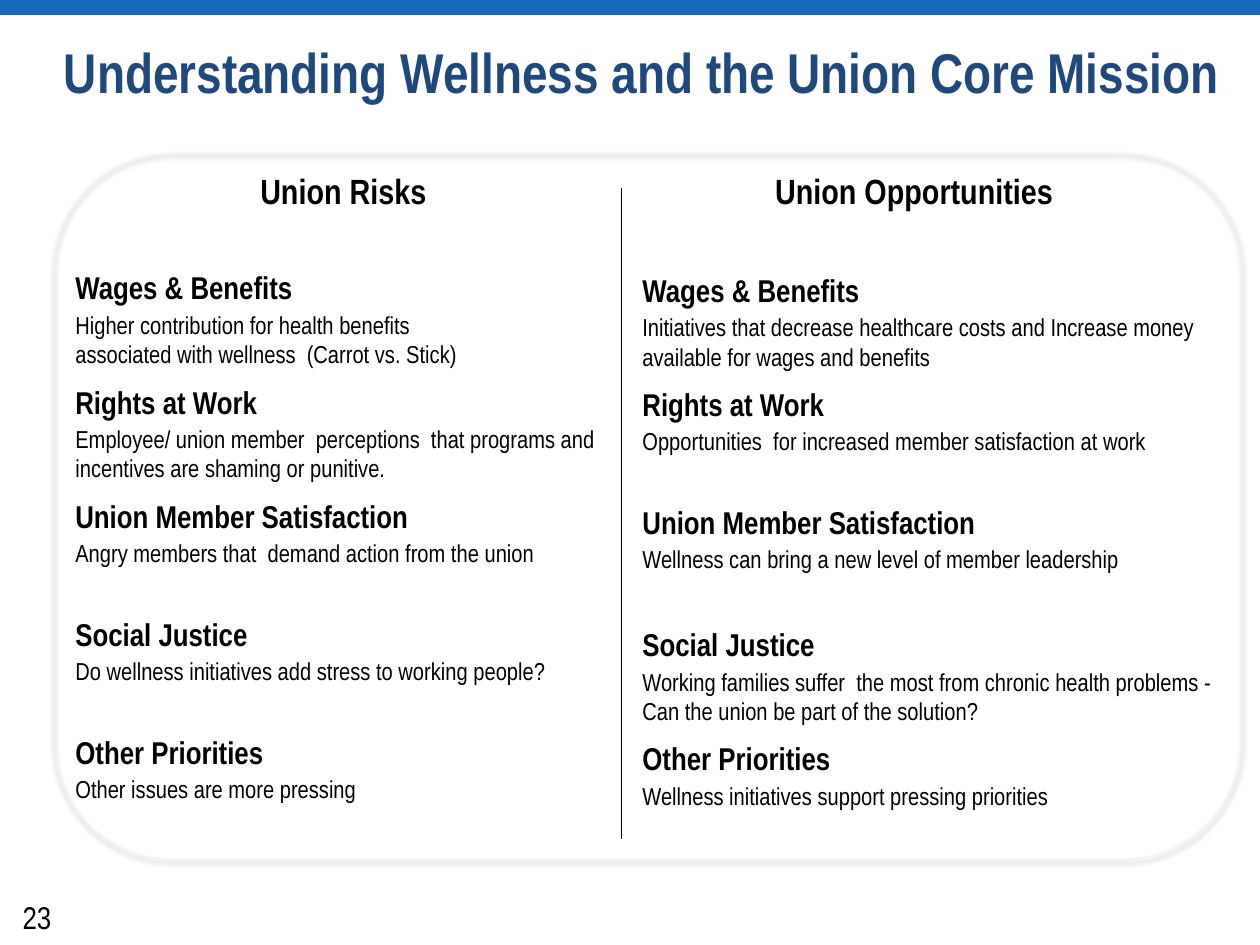
from dataclasses import dataclass

from lxml import etree
from pptx import Presentation
from pptx import util as u
from pptx.dml.color import RGBColor
from pptx.enum import shapes, text
from pptx.oxml import ns

FONT = "Arial Narrow"
COLORS = {
    "bar": "1769B8",
    "title": "1F497D",
    "text": "000000",
    "frame": "F2F2F2",
    "background": "FFFFFF",
}


@dataclass(frozen=True)
class Area:
    left: float
    top: float
    width: float
    height: float

    def lengths(self) -> list[u.Length]:
        return [u.Pt(v) for v in (self.left, self.top, self.width, self.height)]


@dataclass(frozen=True)
class Topic:
    heading: str
    body: str
    before: float = 6


@dataclass(frozen=True)
class Column:
    heading: str
    heading_area: Area
    topics_area: Area
    topics: tuple[Topic, ...]


COLUMNS = (
    Column(
        "Union Risks",
        Area(61.2, 93.6, 270, 31.7),
        Area(36, 149.8, 311.8, 450),
        (
            Topic("Wages & Benefits",
                  "Higher contribution for health benefits \n"
                  "associated with wellness  (Carrot vs. Stick)", 0),
            Topic("Rights at Work",
                  "Employee/ union member  perceptions  that programs and "
                  "incentives are shaming or punitive."),
            Topic("Union Member Satisfaction",
                  "Angry members that  demand action from the union"),
            Topic("Social Justice",
                  "Do wellness initiatives add stress to working people?", 25),
            Topic("Other Priorities", "Other issues are more pressing", 25),
        ),
    ),
    Column(
        "Union Opportunities",
        Area(371.5, 93.6, 301.7, 31.7),
        Area(360, 151.2, 354.2, 527),
        (
            Topic("Wages & Benefits",
                  "Initiatives that decrease healthcare costs and Increase money  "
                  "available for wages and benefits", 0),
            Topic("Rights at Work",
                  "Opportunities  for increased member satisfaction at work"),
            Topic("Union Member Satisfaction",
                  "Wellness can bring a new level of member leadership", 25),
            Topic("Social Justice",
                  "Working families suffer  the most from chronic health problems - "
                  "Can the union be part of the solution?", 27.4),
            Topic("Other Priorities",
                  "Wellness initiatives support pressing priorities"),
        ),
    ),
)


def color(name: str) -> RGBColor:
    return RGBColor.from_string(COLORS[name])


def add_box(page, area: Area):
    box = page.shapes.add_textbox(*area.lengths())
    box.text_frame.word_wrap = True
    return box


def write(para, content: str, size: float, bold: bool = False,
          ink: str = "text") -> None:
    """Add one run per line of content, with line breaks between them."""
    for index, line in enumerate(content.split("\n")):
        if index:
            para.add_line_break()
        span = para.add_run()
        span.text = line
        span.font.name = FONT
        span.font.size = u.Pt(size)
        span.font.bold = bold
        span.font.color.rgb = color(ink)


def add_bar(page) -> None:
    bar = page.shapes.add_shape(
        shapes.MSO_SHAPE.RECTANGLE, *Area(0, 0, 720, 8.6).lengths())
    bar.shadow.inherit = False
    bar.fill.solid()
    bar.fill.fore_color.rgb = color("bar")
    bar.line.fill.background()


def add_title(page) -> None:
    box = add_box(page, Area(29.5, 21.6, 684, 42.5))
    box.text_frame.vertical_anchor = text.MSO_ANCHOR.BOTTOM
    para = box.text_frame.paragraphs[0]
    para.line_spacing = 0.9
    write(para, "Understanding Wellness and the Union Core Mission", 32, True, "title")


def add_frame(page) -> None:
    """Draw the unfilled rounded frame with its soft downward shadow."""
    frame = page.shapes.add_shape(
        shapes.MSO_SHAPE.ROUNDED_RECTANGLE, *Area(31, 87.8, 678.2, 403.2).lengths())
    frame.fill.background()
    frame.line.color.rgb = color("frame")
    frame.line.width = u.Pt(0.75)
    frame.shadow.inherit = False
    effects = frame._element.spPr.find(ns.qn("a:effectLst"))
    shadow = etree.SubElement(
        effects, ns.qn("a:outerShdw"), blurRad=str(u.Pt(3.1)), dist=str(u.Pt(1.8)),
        dir="5400000", rotWithShape="0")
    tint = etree.SubElement(shadow, ns.qn("a:srgbClr"), val=COLORS["text"])
    etree.SubElement(tint, ns.qn("a:alpha"), val="35000")


def add_divider(page) -> None:
    divider = page.shapes.add_connector(
        shapes.MSO_CONNECTOR.STRAIGHT,
        u.Pt(355), u.Pt(107.3), u.Pt(355), u.Pt(479.5))
    divider.line.color.rgb = color("text")
    divider.line.width = u.Pt(0.75)
    etree.SubElement(divider._element.spPr, ns.qn("a:effectLst"))


def add_column(page, column: Column) -> None:
    para = add_box(page, column.heading_area).text_frame.paragraphs[0]
    para.alignment = text.PP_ALIGN.CENTER
    write(para, column.heading, 20, True)

    frame = add_box(page, column.topics_area).text_frame
    for index, topic in enumerate(column.topics):
        heading = frame.add_paragraph() if index else frame.paragraphs[0]
        heading.space_before = u.Pt(topic.before)
        write(heading, topic.heading, 18, True)
        body = frame.add_paragraph()
        write(body, topic.body, 14)
        heading.space_after = body.space_after = u.Pt(2)


def main() -> None:
    deck = Presentation()
    deck.slide_width, deck.slide_height = u.Pt(720), u.Pt(540)
    page = deck.slides.add_slide(deck.slide_layouts[6])
    page.background.fill.solid()
    page.background.fill.fore_color.rgb = color("background")

    add_bar(page)
    add_title(page)
    add_frame(page)
    add_divider(page)
    for column in COLUMNS:
        add_column(page, column)
    number = add_box(page, Area(5.8, 509.8, 36.7, 18))
    write(number.text_frame.paragraphs[0], "23", 18)
    deck.save("out.pptx")


if __name__ == "__main__":
    main()
